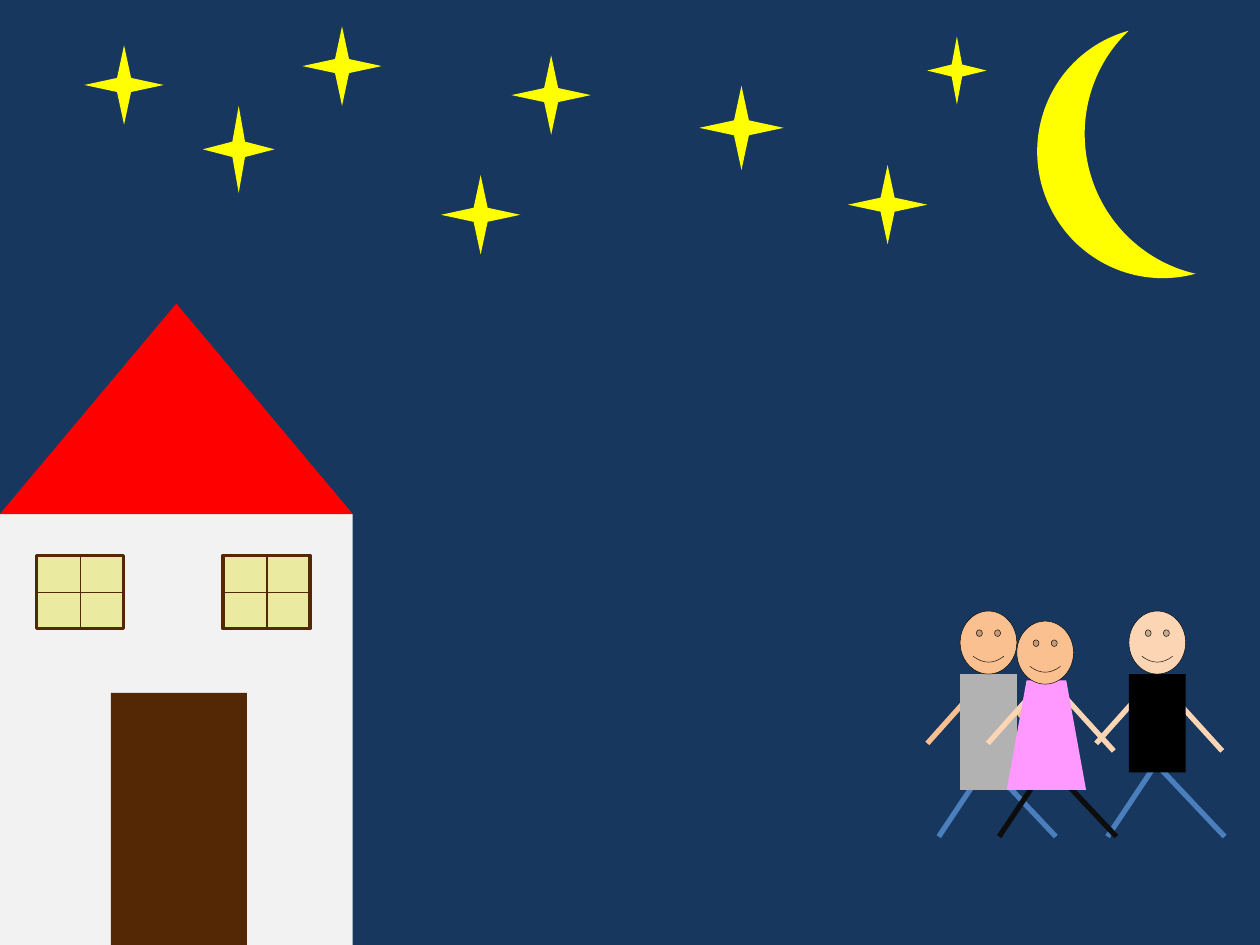
from dataclasses import dataclass

from lxml.etree import SubElement
from pptx import Presentation
from pptx.dml.color import RGBColor
from pptx.enum.shapes import MSO_CONNECTOR, MSO_SHAPE
from pptx.oxml.ns import qn
from pptx.util import Emu, Pt

PX = 9144  # 100 px to the inch
WIDTH, HEIGHT = 1000, 750

NIGHT, YELLOW, RED, WALL = "17375E", "FFFF00", "FF0000", "F2F2F2"
BROWN, GLASS, BLACK = "542804", "EAEAA0", "000000"
TAN, PALE, JEANS, STOCKINGS = "FAC090", "FCD5B5", "4B7EBC", "0D0D0D"


@dataclass(frozen=True)
class Box:
    left: int
    top: int
    width: int
    height: int


@dataclass(frozen=True)
class Person:
    limbs_left: int
    head: Box
    body: Box
    body_kind: MSO_SHAPE
    clothes: str
    skin: str
    arms: str
    legs: str


# Limbs as (start x, end x) from the person's left, (start y, end y) on the slide
ARMS = [((8, -26), (552, 590)), ((34, 74), (552, 596))]
LEGS = [((19, -17), (610, 664)), ((25, 76), (610, 664))]

PEOPLE = [
    Person(762, Box(762, 485, 45, 50), Box(762, 535, 45, 92),
           MSO_SHAPE.RECTANGLE, "B2B2B2", TAN, TAN, JEANS),
    Person(896, Box(896, 485, 45, 50), Box(896, 535, 45, 78),
           MSO_SHAPE.RECTANGLE, BLACK, PALE, PALE, JEANS),
    Person(810, Box(807, 493, 45, 50), Box(799, 540, 63, 87),
           MSO_SHAPE.TRAPEZOID, "FF99FF", TAN, PALE, STOCKINGS),
]

WINDOWS = [Box(left, 441, 69, 58) for left in (29, 177)]
MOON = Box(825, 34, 99, 200)
STARS = [
    Box(555, 68, 67, 67), Box(736, 29, 47, 54), Box(161, 84, 57, 69),
    *(Box(left, top, 63, 63) for left, top in
      [(240, 21), (67, 36), (673, 131), (406, 44), (350, 139)]),
]


def px(length: int) -> Emu:
    return Emu(length * PX)


def rgb(colour: str) -> RGBColor:
    return RGBColor.from_string(colour)


def draw_shape(shapes, kind: MSO_SHAPE, box: Box, fill: str,
               outline: str = "", weight: float = 0):
    shape = shapes.add_shape(kind, px(box.left), px(box.top),
                             px(box.width), px(box.height))
    shape.shadow.inherit = False
    shape.fill.solid()
    shape.fill.fore_color.rgb = rgb(fill)
    if outline:
        shape.line.color.rgb = rgb(outline)
        shape.line.width = Pt(weight)
    else:
        shape.line.fill.background()
    return shape


def draw_line(shapes, xs: tuple[int, int], ys: tuple[int, int],
              colour: str, weight: float) -> None:
    line = shapes.add_connector(MSO_CONNECTOR.STRAIGHT, px(xs[0]), px(ys[0]),
                                px(xs[1]), px(ys[1]))
    line.line.color.rgb = rgb(colour)
    line.line.width = Pt(weight)
    SubElement(line._element.spPr, qn("a:effectLst"))


def draw_person(shapes, person: Person) -> None:
    for limbs, colour in ((ARMS, person.arms), (LEGS, person.legs)):
        for (start, end), ys in limbs:
            xs = (person.limbs_left + start, person.limbs_left + end)
            draw_line(shapes, xs, ys, colour, 3)
    draw_shape(shapes, person.body_kind, person.body, person.clothes)
    draw_shape(shapes, MSO_SHAPE.SMILEY_FACE, person.head, person.skin, BLACK, 0.25)


def draw_window(shapes, pane: Box) -> None:
    draw_shape(shapes, MSO_SHAPE.RECTANGLE, pane, GLASS, BROWN, 2)
    right, bottom = pane.left + pane.width, pane.top + pane.height
    middle_x, middle_y = (pane.left + right + 1) // 2, (pane.top + bottom) // 2
    draw_line(shapes, (middle_x, middle_x), (pane.top, bottom), BROWN, 0.75)
    draw_line(shapes, (pane.left, right), (middle_y, middle_y), BROWN, 0.75)


def draw_house(shapes) -> None:
    draw_shape(shapes, MSO_SHAPE.RECTANGLE, Box(0, 408, 280, 342), WALL)
    draw_shape(shapes, MSO_SHAPE.ISOSCELES_TRIANGLE, Box(0, 241, 280, 167), RED)
    for pane in WINDOWS:
        draw_window(shapes, pane)
    draw_shape(shapes, MSO_SHAPE.RECTANGLE, Box(88, 550, 108, 200), BROWN)


def main() -> None:
    deck = Presentation()
    deck.slide_width, deck.slide_height = px(WIDTH), px(HEIGHT)
    slide = deck.slides.add_slide(deck.slide_layouts[6])

    # Night sky
    slide.background.fill.solid()
    slide.background.fill.fore_color.rgb = rgb(NIGHT)

    # People and house, each as a group
    for person in PEOPLE:
        draw_person(slide.shapes.add_group_shape().shapes, person)
    draw_house(slide.shapes.add_group_shape().shapes)

    # Moon and stars
    moon = draw_shape(slide.shapes, MSO_SHAPE.MOON, MOON, YELLOW)
    moon.adjustments[0] = 0.4
    moon.rotation = 344.6
    sky = slide.shapes.add_group_shape().shapes
    for star in STARS:
        draw_shape(sky, MSO_SHAPE.STAR_4_POINT, star, YELLOW)

    deck.save("out.pptx")


if __name__ == "__main__":
    main()
